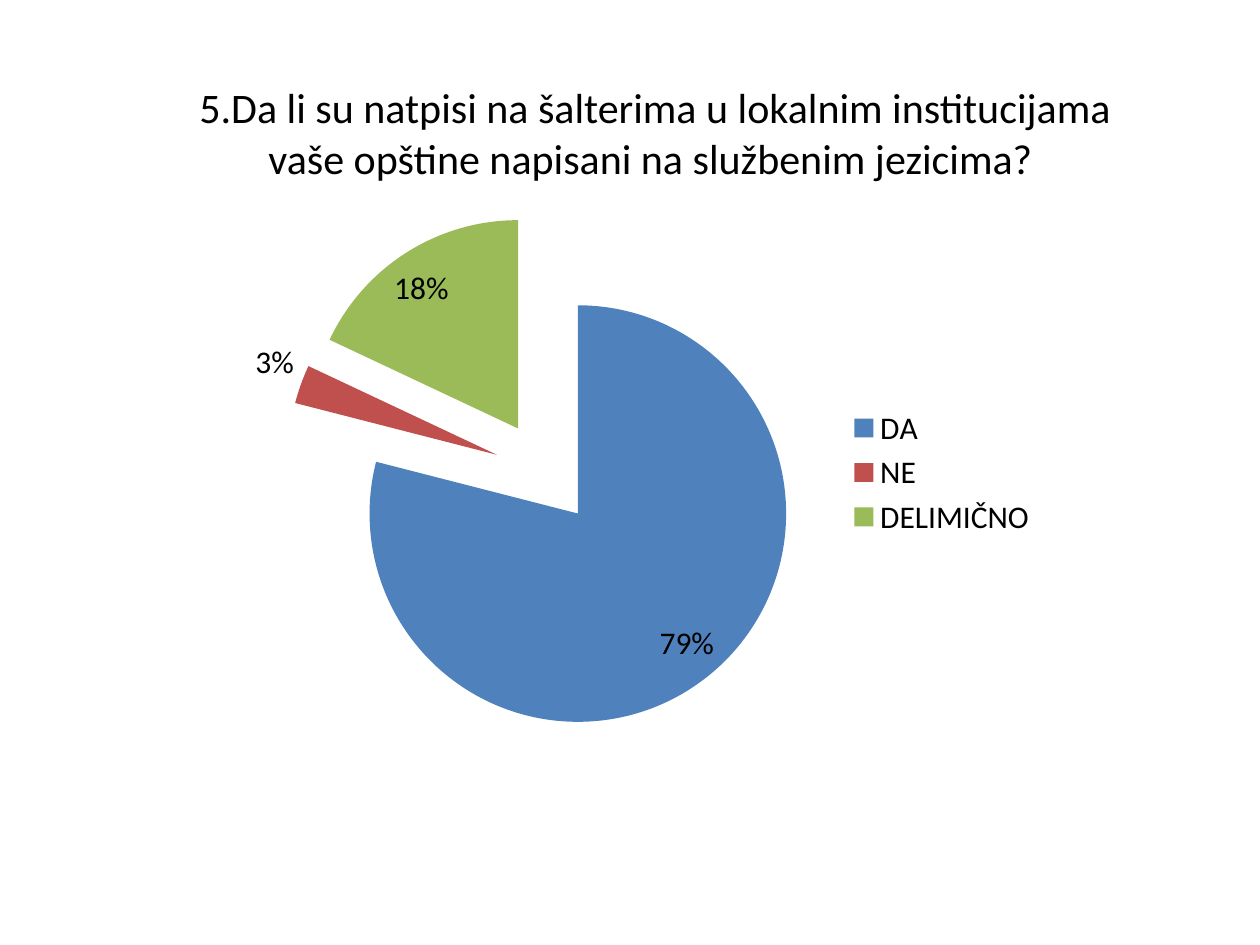
"""Build a survey slide with a question and an exploded pie chart."""
from lxml.etree import SubElement
from pptx import Presentation
from pptx.chart.data import CategoryChartData
from pptx.dml.color import RGBColor
from pptx.enum.chart import XL_CHART_TYPE, XL_LABEL_POSITION, XL_LEGEND_POSITION
from pptx.enum.text import PP_ALIGN
from pptx.oxml import parse_xml
from pptx.oxml.ns import nsdecls, qn
from pptx.util import Pt

QUESTION = ("5.Da li su natpisi na šalterima u lokalnim institucijama "
            "vaše opštine napisani na službenim jezicima? ")
ANSWERS = [("DA", 79, "4F81BD"), ("NE", 3, "C0504D"), ("DELIMIČNO", 18, "9BBB59")]
FONT = "Calibri"
EXPLOSION = 25
PLOT = {"x": 0.09, "y": 0.03, "w": 0.62, "h": 0.94}


def color(value):
    return RGBColor.from_string(value)


def style_font(font, size):
    font.name = FONT
    font.size = Pt(size)
    font.color.rgb = color("000000")


def add_question(s):
    tf = s.shapes.add_textbox(Pt(99.4), Pt(43.2), Pt(550), Pt(65.5)).text_frame
    tf.word_wrap = True
    tf.text = QUESTION
    p = tf.paragraphs[0]
    p.alignment = PP_ALIGN.CENTER
    style_font(p.runs[0].font, 24)


def place_plot(chart):
    area = chart.plots[0]._element.getparent()
    for old in area.findall(qn("c:layout")):
        area.remove(old)
    layout = parse_xml(f"<c:layout {nsdecls('c')}/>")
    manual = SubElement(layout, qn("c:manualLayout"))
    settings = {"layoutTarget": "inner", "xMode": "edge", "yMode": "edge", **PLOT}
    for name, value in settings.items():
        SubElement(manual, qn(f"c:{name}")).set("val", str(value))
    area.insert(0, layout)


def add_pie(s):
    data = CategoryChartData()
    data.categories = [name for name, _, _ in ANSWERS]
    data.add_series("Series 1", [value for _, value, _ in ANSWERS])
    chart = s.shapes.add_chart(XL_CHART_TYPE.PIE, Pt(120), Pt(110), Pt(480), Pt(320), data).chart
    chart.has_title = False
    style_font(chart.font, 18)
    chart.has_legend = True
    chart.legend.position = XL_LEGEND_POSITION.RIGHT
    chart.legend.include_in_layout = False

    plot = chart.plots[0]
    plot.vary_by_categories = True
    series = plot.series[0]
    explosion = parse_xml(f'<c:explosion {nsdecls("c")} val="{EXPLOSION}"/>')
    series._element.find(qn("c:tx")).addnext(explosion)
    for i, (_, _, fill) in enumerate(ANSWERS):
        point = series.points[i].format.fill
        point.solid()
        point.fore_color.rgb = color(fill)

    labels = series.data_labels
    labels.show_percentage = True
    labels.show_value = False
    labels.number_format = "0%"
    labels.number_format_is_linked = False
    labels.position = XL_LABEL_POSITION.BEST_FIT
    style_font(labels.font, 18)
    place_plot(chart)


def main():
    prs = Presentation()
    prs.slide_width, prs.slide_height = Pt(720), Pt(540)
    s = prs.slides.add_slide(prs.slide_layouts[6])
    add_question(s)
    add_pie(s)
    prs.save("out.pptx")


if __name__ == "__main__":
    main()
